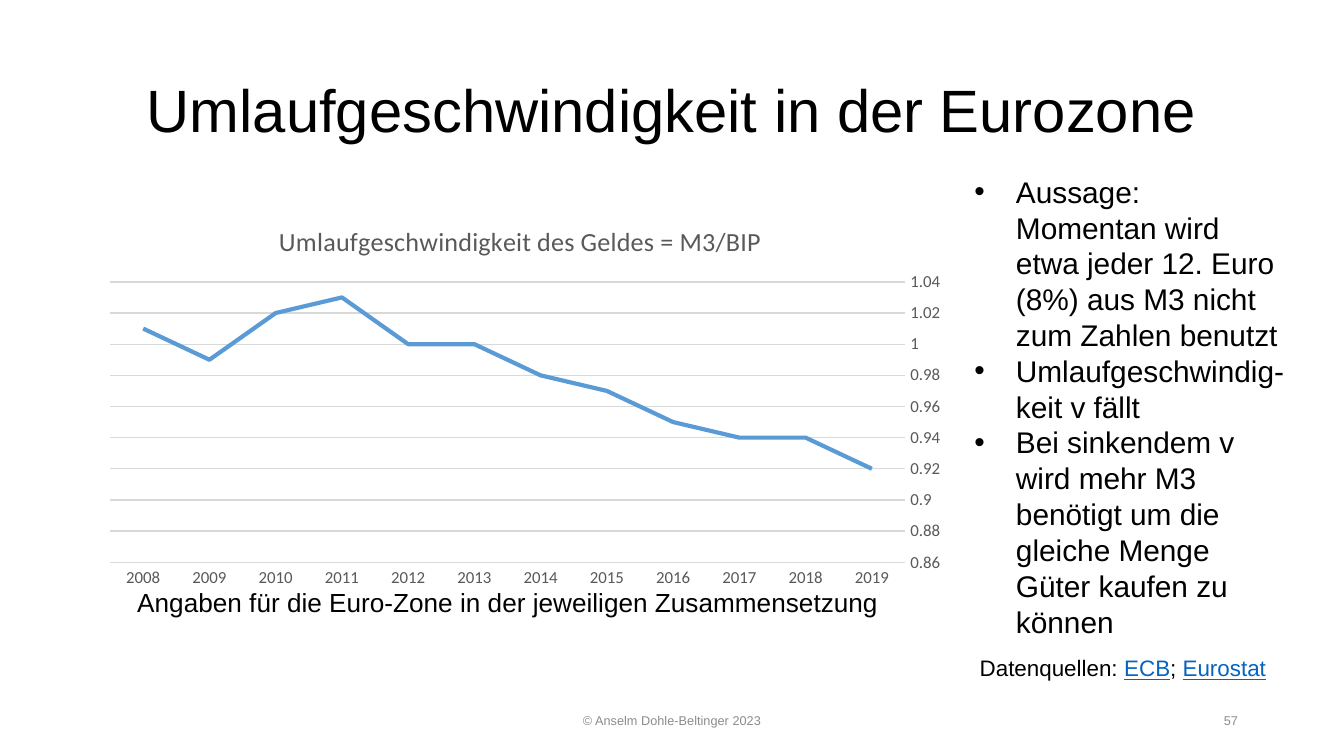
from dataclasses import dataclass

from lxml import etree
from pptx import Presentation
from pptx import util as u
from pptx.chart.data import CategoryChartData
from pptx.dml.color import RGBColor
from pptx.enum import chart as ch
from pptx.enum import text as tx
from pptx.oxml.ns import qn


@dataclass(frozen=True)
class Theme:
    ink: str = "000000"
    soft: str = "595959"
    pale: str = "8C8C8C"
    grid: str = "D9D9D9"
    line: str = "5B9BD5"
    link: str = "0563C1"
    font: str = "Arial"
    plot: str = "Calibri"
    head: float = 32
    body: float = 16
    note: float = 14
    data: float = 12
    base: float = 10
    axis: float = 9
    foot: float = 6.8


def style(font, size, color, name, under=None):
    font.size = u.Pt(size)
    font.name = name
    font.color.rgb = RGBColor.from_string(color)
    font.underline = under


def stroke(line, color, width):
    line.color.rgb = RGBColor.from_string(color)
    line.width = u.Pt(width)


def add_text(para, words, size, color=Theme.ink, name=Theme.font, under=None):
    run = para.add_run()
    run.text = words
    style(run.font, size, color, name, under)
    return run


def add_bullet(para, indent):
    props = para._p.get_or_add_pPr()
    props.set("marL", str(u.Inches(indent)))
    props.set("indent", str(-u.Inches(indent)))
    font = etree.SubElement(props, qn("a:buFont"))
    font.set("typeface", Theme.font)
    etree.SubElement(props, qn("a:buChar")).set("char", "•")


def place(node, index, **parts):
    old = node.find(qn("c:layout"))
    if old is not None:
        node.remove(old)
    layout = etree.Element(qn("c:layout"))
    manual = etree.SubElement(layout, qn("c:manualLayout"))
    for tag, value in parts.items():
        etree.SubElement(manual, qn("c:" + tag)).set("val", str(value))
    node.insert(index, layout)


class Page:
    def __init__(self, deck, theme):
        self.theme = theme
        self.slide = deck.slides.add_slide(deck.slide_layouts[6])

    def text(self, box, paras, size, color=Theme.ink, align=tx.PP_ALIGN.LEFT,
             mid=False, bullet=0, space=None):
        shape = self.slide.shapes.add_textbox(*map(u.Inches, box))
        frame = shape.text_frame
        frame.word_wrap = True
        if mid:
            frame.vertical_anchor = tx.MSO_ANCHOR.MIDDLE
        else:
            frame.margin_left = frame.margin_right = 0
            frame.margin_top = frame.margin_bottom = 0
        for i, runs in enumerate(paras):
            para = frame.add_paragraph() if i else frame.paragraphs[0]
            para.alignment = align
            para.line_spacing = space
            if bullet:
                add_bullet(para, bullet)
            for words, link in runs:
                add_text(para, words, size, self.theme.link if link else color,
                         under=True if link else None)

    def chart(self, box, title, cats, vals):
        t = self.theme
        data = CategoryChartData()
        data.categories = cats
        data.add_series("Series 1", vals)
        chart = self.slide.shapes.add_chart(
            ch.XL_CHART_TYPE.LINE, *map(u.Inches, box), data).chart
        style(chart.font, t.base, t.ink, t.plot)
        chart.has_legend = False
        chart.has_title = True
        head = chart.chart_title
        run = add_text(head.text_frame.paragraphs[0], title, t.note, t.soft,
                       t.plot)
        run.font.bold = False
        head.include_in_layout = False
        place(head._element, 1, xMode="edge", yMode="edge", x=0.21, y=0.04)
        place(chart._chartSpace.chart.plotArea, 0, layoutTarget="inner",
              xMode="edge", yMode="edge", x=0.02, y=0.2, w=0.92, h=0.71)

        years, rate = chart.category_axis, chart.value_axis
        for axis in (years, rate):
            axis.major_tick_mark = axis.minor_tick_mark = ch.XL_TICK_MARK.NONE
            style(axis.tick_labels.font, t.axis, t.soft, t.plot)
        years.reverse_order = True
        stroke(years.format.line, t.grid, 0.75)
        rate.minimum_scale, rate.maximum_scale = 0.86, 1.04
        rate.major_unit = 0.02
        rate.format.line.fill.background()
        stroke(rate.major_gridlines.format.line, t.grid, 0.75)

        plot = chart.plots[0]
        plot.vary_by_categories = False
        speed = plot.series[0]
        speed.smooth = False
        speed.marker.style = ch.XL_MARKER_STYLE.NONE
        stroke(speed.format.line, t.line, 2.25)


def main():
    deck = Presentation()
    deck.slide_width = u.Inches(10)
    deck.slide_height = u.Inches(10 * 9 / 16)
    t = Theme()
    page = Page(deck, t)
    mid, right = tx.PP_ALIGN.CENTER, tx.PP_ALIGN.RIGHT

    page.text((0.69, 0.3, 8.62, 1.09),
              [[("Umlaufgeschwindigkeit in der Eurozone", False)]],
              t.head, align=mid, mid=True, space=0.9)
    page.text((3.31, 5.21, 3.38, 0.3),
              [[("© Anselm Dohle-Beltinger 2023", False)]],
              t.foot, t.pale, mid, mid=True)
    page.text((7.06, 5.21, 2.25, 0.3), [[("57", False)]],
              t.foot, t.pale, right, mid=True)
    page.chart((0.69, 1.51, 6.43, 2.94),
               "Umlaufgeschwindigkeit des Geldes = M3/BIP",
               [str(year) for year in range(2019, 2007, -1)],
               [0.92, 0.94, 0.94, 0.95, 0.97, 0.98,
                1, 1, 1.03, 1.02, 0.99, 1.01])
    points = [
        "Aussage: Momentan wird etwa jeder 12. Euro (8%) aus M3 nicht "
        "zum Zahlen benutzt",
        "Umlaufgeschwindig-keit v fällt",
        "Bei sinkendem v wird mehr M3 benötigt um die gleiche Menge Güter "
        "kaufen zu können",
    ]
    page.text((7.25, 1.29, 2.34, 3.5), [[(point, False)] for point in points],
              t.body, bullet=0.31)
    page.text((0.88, 4.36, 5.8, 0.24),
              [[("Angaben für die Euro-Zone in der jeweiligen "
                 "Zusammensetzung", False)]], t.note, align=mid)
    page.text((7.29, 4.87, 2.3, 0.2),
              [[("Datenquellen: ", False), ("ECB", True),
                ("; ", False), ("Eurostat", True)]], t.data)
    deck.save("out.pptx")


if __name__ == "__main__":
    main()
